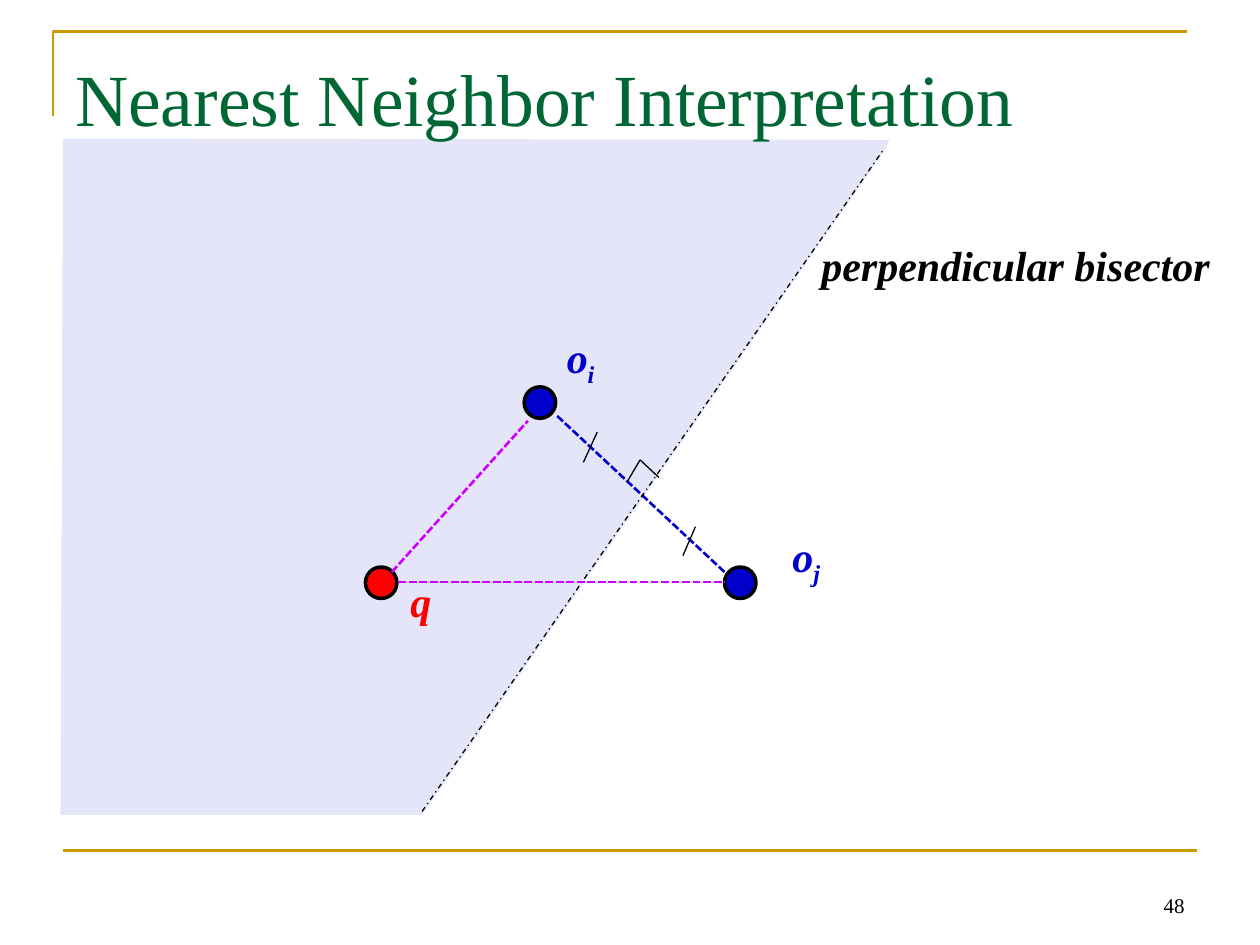
import pptx
import pptx.util
from dataclasses import dataclass
from lxml import etree
from pptx.dml.color import RGBColor
from pptx.enum.dml import MSO_LINE
from pptx.enum.shapes import MSO_CONNECTOR, MSO_SHAPE
from pptx.enum.text import MSO_ANCHOR, MSO_AUTO_SIZE, PP_ALIGN
from pptx.oxml.ns import qn
from pptx.util import Inches

GOLD = RGBColor(0xCC, 0x99, 0x00)
GREEN = RGBColor(0x00, 0x66, 0x33)
BLUE = RGBColor(0x00, 0x00, 0xCC)
RED = RGBColor(0xFF, 0x00, 0x00)
PINK = RGBColor(0xCC, 0x00, 0xFF)
BLACK = RGBColor(0x00, 0x00, 0x00)
FACE = "Times New Roman"
DOT = 0.25


@dataclass
class Line:
    start: tuple[float, float]
    end: tuple[float, float]
    color: RGBColor = BLACK
    width: float = 0.75
    dash: MSO_LINE | None = None


@dataclass
class Label:
    text: str
    box: tuple[float, float, float, float]
    color: RGBColor
    sub: str = ""


DOTS = [((4.16, 3.07), BLUE), ((5.75, 4.5), BLUE), ((2.9, 4.5), RED)]
LABELS = [
    Label("o", (4.4, 2.58, 0.43, 0.5), BLUE, "i"),
    Label("o", (6.19, 4.16, 0.43, 0.5), BLUE, "j"),
    Label("q", (3.16, 4.52, 0.37, 0.5), RED),
    Label("perpendicular bisector", (6.42, 1.85, 3.31, 0.5), BLACK),
]
RULE = Line((0.5, 6.75), (9.5, 6.75), GOLD, 1.5)
LINK = Line((5.75, 4.54), (4.41, 3.29), BLUE, 1.5, MSO_LINE.SQUARE_DOT)
BISECTOR = Line((3.35, 6.44), (7.01, 1.19), dash=MSO_LINE.DASH_DOT)
CORNER = [Line((4.98, 3.82), (5.08, 3.65)), Line((5.23, 3.79), (5.08, 3.65))]
TICKS = [Line((4.63, 3.67), (4.74, 3.43)), Line((5.42, 4.41), (5.52, 4.18))]
REACH = [
    Line((3.11, 4.54), (4.19, 3.34), PINK, 1.5, MSO_LINE.SQUARE_DOT),
    Line((3.16, 4.62), (5.75, 4.62), PINK, 1.5, MSO_LINE.SQUARE_DOT),
]


def draw_line(shapes, line: Line) -> None:
    ends = [Inches(v) for v in line.start + line.end]
    link = shapes.add_connector(MSO_CONNECTOR.STRAIGHT, *ends)
    link.line.color.rgb = line.color
    link.line.width = pptx.util.Pt(line.width)
    if line.dash is not None:
        link.line.dash_style = line.dash
    etree.SubElement(link._element.spPr, qn("a:effectLst"))


def draw_path(shapes, points: list[tuple[float, float]], close: bool):
    spots = [(Inches(x), Inches(y)) for x, y in points]
    pen = shapes.build_freeform(*spots[0])
    pen.add_line_segments(spots[1:], close=close)
    shape = pen.convert_to_shape()
    shape.shadow.inherit = False
    return shape


def draw_frame(shapes) -> None:
    frame = draw_path(shapes, [(0.42, 0.92), (0.42, 0.25), (9.42, 0.25)], False)
    frame.fill.background()
    frame.line.color.rgb = GOLD
    frame.line.width = pptx.util.Pt(1.5)


def draw_region(shapes) -> None:
    """Shade the half plane that is nearer to the first object."""
    edge = [(7.03, 1.18), (3.35, 6.47), (0.48, 6.47), (0.5, 1.1), (7.06, 1.11)]
    region = draw_path(shapes, edge, True)
    region.fill.solid()
    region.fill.fore_color.rgb = BLUE
    region.line.fill.background()
    tint = region._element.spPr.find(qn("a:solidFill"))[0]
    etree.SubElement(tint, qn("a:alpha"), val="10000")


def draw_dot(shapes, left: float, top: float, color: RGBColor) -> None:
    dot = shapes.add_shape(
        MSO_SHAPE.OVAL, Inches(left), Inches(top), Inches(DOT), Inches(DOT))
    dot.shadow.inherit = False
    dot.fill.solid()
    dot.fill.fore_color.rgb = color
    dot.line.color.rgb = BLACK
    dot.line.width = pptx.util.Pt(2)


def draw_text(shapes, text: str, box: tuple, size: float, color: RGBColor):
    frame = shapes.add_textbox(*[Inches(v) for v in box]).text_frame
    frame.word_wrap = True
    frame.text = text
    style(frame.paragraphs[0].runs[0].font, size, color)
    return frame


def style(font, size: float, color: RGBColor) -> None:
    font.name = FACE
    font.size = pptx.util.Pt(size)
    font.color.rgb = color


def draw_label(shapes, label: Label) -> None:
    frame = draw_text(shapes, label.text, label.box, 24, label.color)
    frame.word_wrap = False
    frame.auto_size = MSO_AUTO_SIZE.SHAPE_TO_FIT_TEXT
    para = frame.paragraphs[0]
    if label.sub:
        run = para.add_run()
        run.text = label.sub
        style(run.font, 24, label.color)
        run._r.get_or_add_rPr().set("baseline", "-25000")
    for run in para.runs:
        run.font.bold = True
        run.font.italic = True


def main() -> None:
    deck = pptx.Presentation()
    deck.slide_width, deck.slide_height = Inches(10), Inches(7.5)
    shapes = deck.slides.add_slide(deck.slide_layouts[6]).shapes

    draw_frame(shapes)
    draw_line(shapes, RULE)
    draw_region(shapes)
    title = draw_text(
        shapes, "Nearest Neighbor Interpretation", (0.5, 0.3, 9, 1.25), 42, GREEN)
    title.margin_top = Inches(0.12)
    number = draw_text(shapes, "48", (7.17, 6.83, 2.33, 0.5), 12, BLACK)
    number.vertical_anchor = MSO_ANCHOR.BOTTOM
    number.paragraphs[0].alignment = PP_ALIGN.RIGHT

    draw_line(shapes, LINK)
    for (left, top), color in DOTS:
        draw_dot(shapes, left, top, color)
    draw_line(shapes, BISECTOR)
    corner = shapes.add_group_shape()
    for line in CORNER:
        draw_line(corner.shapes, line)
    for line in TICKS + REACH:
        draw_line(shapes, line)
    for label in LABELS:
        draw_label(shapes, label)
    deck.save("out.pptx")


if __name__ == "__main__":
    main()
